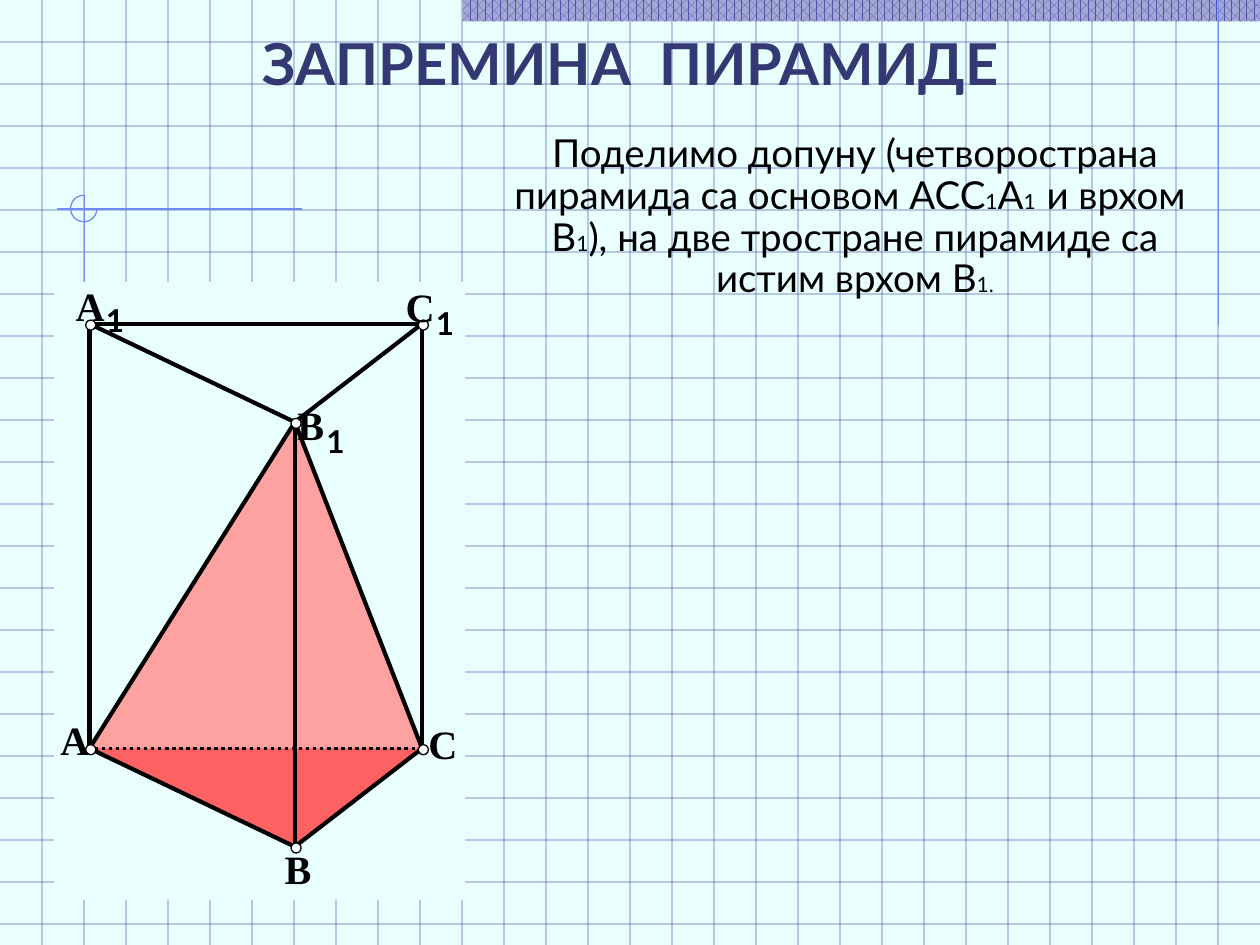
from lxml import etree
from pptx import Presentation
from pptx.dml.color import RGBColor
from pptx.enum import dml, shapes, text
from pptx.oxml.ns import qn
from pptx.util import Inches, Pt

PAPER = RGBColor(0xE9, 0xFF, 0xFE)
GRID = RGBColor(0x4F, 0x56, 0xAD)
BAND = RGBColor(0xA3, 0xA7, 0xD5)
ACCENT = RGBColor(0x6F, 0x89, 0xF7)
TITLE = RGBColor(0x35, 0x39, 0x73)
SIDE = RGBColor(0xFD, 0xA1, 0xA1)
BASE = RGBColor(0xFD, 0x61, 0x61)
INK = RGBColor(0x01, 0x01, 0x01)
BLACK = RGBColor(0, 0, 0)
WHITE = RGBColor(255, 255, 255)

WIDTH, HEIGHT, CELL = 10, 7.5, 1 / 3

# Content: text with its format
HEADING = [("ЗАПРЕМИНА  ПИРАМИДЕ", dict(size=Pt(33), name="Lato", bold=True))]
BODY, SUB = dict(size=Pt(22), name="Lato"), dict(size=Pt(12), name="Lato")
EXPLANATION = [
    ("Поделимо допуну (четворострана пирамида са основом АСС", BODY), ("1", SUB),
    ("А", BODY), ("1  ", SUB), ("и врхом  В", BODY), ("1", SUB),
    ("), на две тростране пирамиде са истим врхом В", BODY), ("1.", SUB),
]
LETTER = dict(size=Pt(23), name="Times New Roman", bold=True)
INDEX = dict(size=Pt(18), name="Lato", bold=True)

# Content: the prism, its painted faces and its edges
VERTICES = {
    "A": (0.71, 5.94), "B": (2.34, 6.72), "C": (3.35, 5.94),
    "A1": (0.71, 2.57), "B1": (2.34, 3.35), "C1": (3.35, 2.57),
}
FACES = [(("B1", "C", "B"), SIDE), (("B", "B1", "A"), SIDE), (("C", "B", "A"), BASE)]
EDGES = [("B", "C"), ("A", "B"), ("B1", "B"), ("A", "B1"), ("B1", "C"),
         ("C1", "C"), ("A1", "A"), ("A1", "B1"), ("B1", "C1"), ("C1", "A1")]
# Vertex: place of the letter, place of the index
LABELS = {
    "C": ((3.4, 5.71), None), "B": ((2.26, 6.7), None), "A": ((0.48, 5.68), None),
    "B1": ((2.36, 3.18), (2.59, 3.35)), "C1": ((3.22, 2.24), (3.46, 2.41)),
    "A1": ((0.6, 2.23), (0.84, 2.39)),
}


def inches(*values):
    return [Inches(value) for value in values]


def add_line(page, start, end, color, width=0.75, alpha=None, dash=None):
    line = page.shapes.add_connector(
        shapes.MSO_CONNECTOR.STRAIGHT, *inches(*start, *end))
    line.line.color.rgb = color
    line.line.width = Pt(width)
    if dash:
        line.line.dash_style = dash
    properties = line._element.spPr
    if alpha:
        tint = next(properties.iter(qn("a:srgbClr")))
        etree.SubElement(tint, qn("a:alpha")).set("val", str(alpha * 1000))
    etree.SubElement(properties, qn("a:effectLst"))


def add_shape(page, kind, place, fill=None, line=None, width=0):
    shape = page.shapes.add_shape(kind, *inches(*place))
    paint(shape, fill)
    if line is not None:
        shape.line.color.rgb = line
        shape.line.width = Pt(width)
    return shape


def paint(shape, fill):
    shape.shadow.inherit = False
    shape.line.fill.background()
    if fill is None:
        shape.fill.background()
    else:
        shape.fill.solid()
        shape.fill.fore_color.rgb = fill


def add_text(page, place, runs, color, align=None, spacing=None, label=False):
    box = page.shapes.add_textbox(*inches(*place))
    frame = box.text_frame
    frame.word_wrap = not label
    frame.vertical_anchor = text.MSO_ANCHOR.TOP
    if label:
        for side in ("left", "top", "right", "bottom"):
            setattr(frame, f"margin_{side}", 0)
    para = frame.paragraphs[0]
    para.alignment = align
    para.line_spacing = spacing
    for words, style in runs:
        span = para.add_run()
        span.text = words
        span.font.color.rgb = color
        for key, value in style.items():
            setattr(span.font, key, value)


def draw_background(page):
    page.background.fill.solid()
    page.background.fill.fore_color.rgb = PAPER
    # Squared paper
    for row in range(1, 23):
        add_line(page, (0, row * CELL), (WIDTH, row * CELL), GRID, alpha=50)
    for column in range(1, 30):
        add_line(page, (column * CELL, 0), (column * CELL, HEIGHT), GRID, alpha=50)
    # Patterned band at the top
    band = add_shape(page, shapes.MSO_SHAPE.RECTANGLE, (3.67, 0, 6.33, 0.17))
    band.fill.patterned()
    band.fill.pattern = dml.MSO_PATTERN.PERCENT_60
    band.fill.fore_color.rgb = GRID
    band.fill.back_color.rgb = BAND
    # Accent lines and three-quarter circle
    for start, end in [((9.67, 0), (9.67, 2.58)), ((2.4, 1.66), (0.45, 1.66)),
                       ((0.67, 1.55), (0.67, 4.09))]:
        add_line(page, start, end, ACCENT)
    arc = add_shape(page, shapes.MSO_SHAPE.ARC, (0.56, 1.55, 0.21, 0.21),
                    line=ACCENT, width=0.75)
    arc.adjustments[0] = 0
    arc.adjustments[1] = 162  # 270 degrees


def draw_prism(page):
    add_shape(page, shapes.MSO_SHAPE.RECTANGLE, (0.43, 2.24, 3.26, 4.9), PAPER)
    for names, color in FACES:
        first, *others = [inches(*VERTICES[name]) for name in names]
        builder = page.shapes.build_freeform(*first)
        builder.add_line_segments(others, close=True)
        paint(builder.convert_to_shape(), color)
    add_line(page, VERTICES["C"], VERTICES["A"], INK, 0,
             dash=dml.MSO_LINE.ROUND_DOT)
    for start, end in EDGES:
        add_line(page, VERTICES[start], VERTICES[end], INK, 2.38)
    # Vertex dots and their labels
    for name, (letter_at, index_at) in LABELS.items():
        x, y = VERTICES[name]
        add_shape(page, shapes.MSO_SHAPE.OVAL, (x - 0.03, y - 0.03, 0.08, 0.08),
                  WHITE, INK)
        add_text(page, (*letter_at, 0.35, 0.44), [(name[0], LETTER)], BLACK, label=True)
        if index_at:
            add_text(page, (*index_at, 0.25, 0.36), [(name[1], INDEX)], BLACK, label=True)


def main():
    deck = Presentation()
    deck.slide_width, deck.slide_height = inches(WIDTH, HEIGHT)
    page = deck.slides.add_slide(deck.slide_layouts[6])
    center = text.PP_ALIGN.CENTER
    draw_background(page)
    add_text(page, (0.42, 0.17, 9.17, 0.65), HEADING, TITLE, center)
    add_text(page, (3.93, 1.02, 5.71, 1.47), EXPLANATION, BLACK, center, 0.9)
    draw_prism(page)
    deck.save("out.pptx")


if __name__ == "__main__":
    main()
